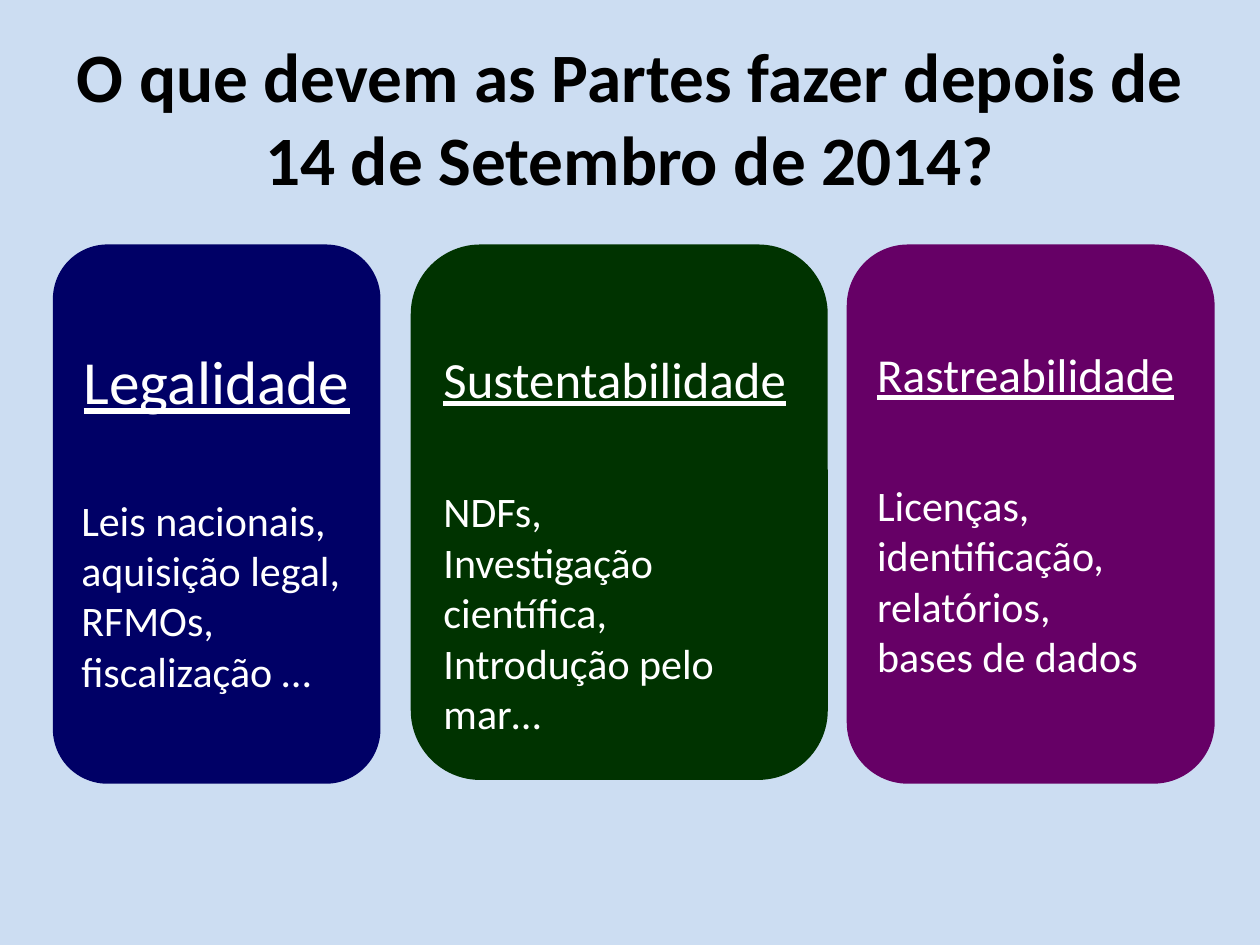
from dataclasses import dataclass

from pptx import Presentation
from pptx import util as u
from pptx.dml.color import RGBColor
from pptx.enum import shapes, text


@dataclass(frozen=True)
class Theme:
    """Colours, font and type sizes of the slide."""
    font: str = "Calibri"
    background: str = "CCDDF2"
    title_ink: str = "000000"
    card_ink: str = "FFFFFF"
    title_size: float = 39.6
    body_size: float = 24
    heading_gap: float = 44


THEME = Theme()
CARD_TOP = 1.94
PILLARS = [
    ((0.42, CARD_TOP, 2.6, 4.28), "000066", "Legalidade", 35, text.PP_ALIGN.CENTER,
     ["Leis nacionais, aquisição legal, RFMOs,", "fiscalização …"]),
    ((3.26, CARD_TOP, 3.31, 4.25), "003300", "Sustentabilidade", 29, text.PP_ALIGN.LEFT,
     ["NDFs,", "Investigação científica,", "Introdução pelo mar…"]),
    ((6.72, CARD_TOP, 2.92, 4.28), "660066", "Rastreabilidade", 27, text.PP_ALIGN.LEFT,
     ["Licenças, identificação, relatórios,", "bases de dados"]),
]


def style_paragraph(paragraph, size, ink, align, bold=False, underline=False):
    """Align a paragraph and format its runs."""
    paragraph.alignment = align
    for run in paragraph.runs:
        run.font.name = THEME.font
        run.font.size = u.Pt(size)
        run.font.color.rgb = RGBColor.from_string(ink)
        run.font.bold = bold
        run.font.underline = underline


def add_title(slide, box, wording):
    """Place the centred slide title in its box."""
    frame = slide.shapes.add_textbox(*map(u.Inches, box)).text_frame
    frame.word_wrap = True
    frame.vertical_anchor = text.MSO_ANCHOR.MIDDLE
    frame.text = wording
    style_paragraph(frame.paragraphs[0], THEME.title_size, THEME.title_ink,
                    text.PP_ALIGN.CENTER, bold=True)


def add_pillar(slide, box, colour, heading, heading_size, heading_align, lines):
    """Place one rounded card with an underlined heading and body lines."""
    card = slide.shapes.add_shape(shapes.MSO_SHAPE.ROUNDED_RECTANGLE, *map(u.Inches, box))
    card.shadow.inherit = False
    card.fill.solid()
    card.fill.fore_color.rgb = RGBColor.from_string(colour)
    card.line.fill.background()
    frame = card.text_frame
    frame.word_wrap = True
    frame.vertical_anchor = text.MSO_ANCHOR.TOP
    frame.margin_top = u.Inches(0.66)
    frame.text = "\n".join([heading, *lines])
    heading_paragraph, *body = frame.paragraphs
    style_paragraph(heading_paragraph, heading_size, THEME.card_ink,
                    heading_align, underline=True)
    heading_paragraph.space_after = u.Pt(THEME.heading_gap)
    for paragraph in body:
        style_paragraph(paragraph, THEME.body_size, THEME.card_ink, text.PP_ALIGN.LEFT)


def main():
    """Build the slide and save it."""
    deck = Presentation()
    deck.slide_width, deck.slide_height = u.Inches(10), u.Inches(7.5)
    slide = deck.slides.add_slide(deck.slide_layouts[6])
    slide.background.fill.solid()
    slide.background.fill.fore_color.rgb = RGBColor.from_string(THEME.background)
    add_title(slide, (0.5, 0.3, 9, 1.25),
              "O que devem as Partes fazer depois de 14 de Setembro de 2014?")
    for pillar in PILLARS:
        add_pillar(slide, *pillar)
    deck.save("out.pptx")


if __name__ == "__main__":
    main()
